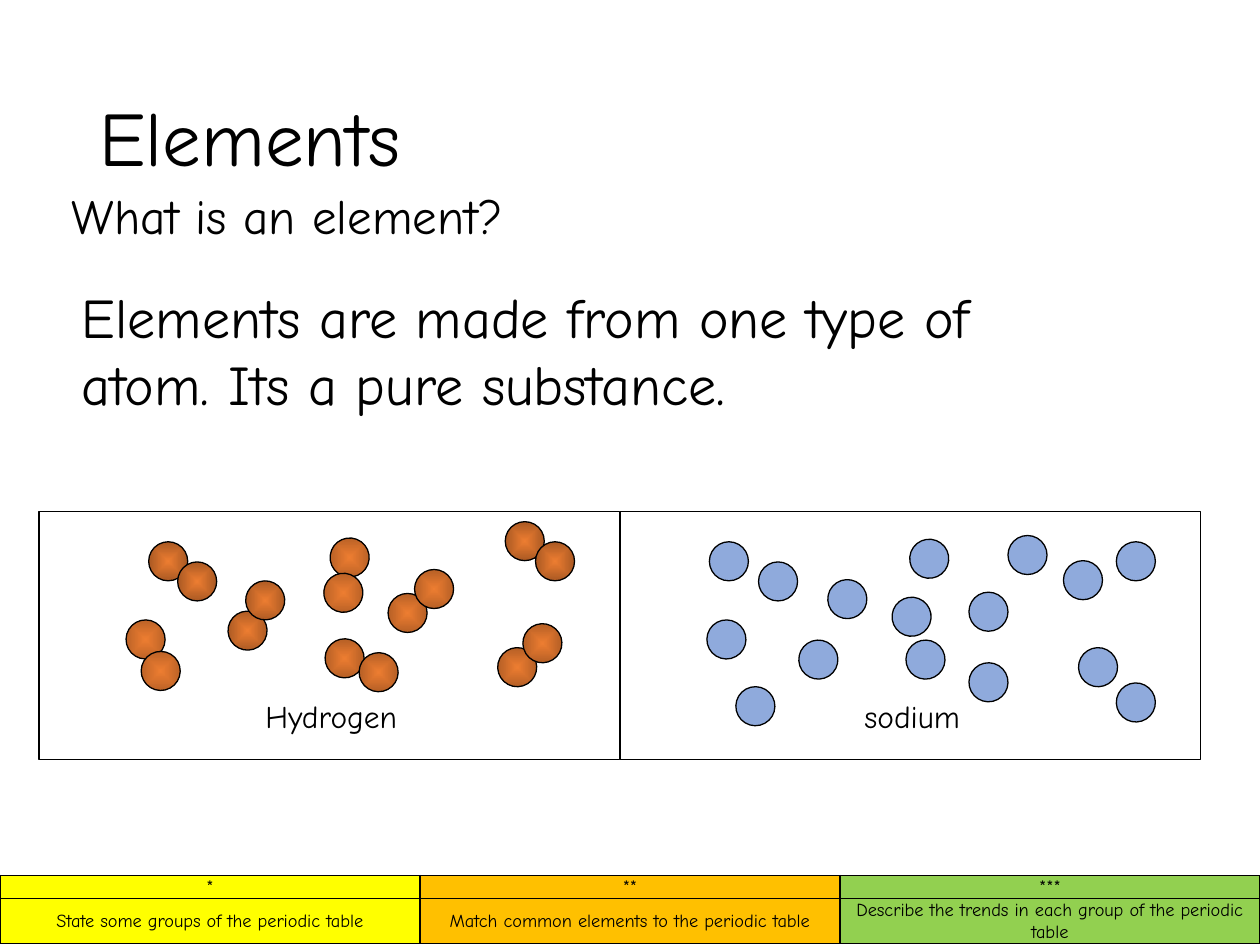
from lxml import etree
from pptx import Presentation
from pptx.dml.color import RGBColor
from pptx.enum import shapes, text
from pptx.oxml import parse_xml
from pptx.oxml.ns import nsdecls, qn
from pptx.util import Inches, Pt

FONT = "Comic Neue"
COLORS = {
    "black": "000000", "white": "FFFFFF", "sodium": "8FAADC",
    "hydrogen": "ED7D31", "hydrogen_edge": "AA5923",
    "yellow": "FFFF00", "amber": "FFC000", "green": "92D050",
}
GOALS = [
    ("*", "State some groups of the periodic table", "yellow"),
    ("**", "Match common elements to the periodic table", "amber"),
    ("***", "Describe the trends in each group of the periodic table", "green"),
]
ATOM_SIZE = 0.31
PANEL_TOP, PANEL_WIDTH, PANEL_HEIGHT = 4.06, 4.61, 1.97

# Pairs of atoms: rotation, then left and top of each
HYDROGEN = [
    (0, (1.18, 4.3), (1.41, 4.46)),
    (31.3, (1, 4.92), (1.12, 5.17)),
    (266.6, (1.81, 4.85), (1.95, 4.61)),
    (346.9, (2.58, 5.07), (2.85, 5.18)),
    (285.3, (3.08, 4.71), (3.29, 4.52)),
    (66.1, (2.62, 4.27), (2.57, 4.55)),
    (0, (4.01, 4.14), (4.25, 4.3)),
    (282.6, (3.95, 5.14), (4.15, 4.95)),
]
SODIUM = [
    (0, (5.63, 4.3), (6.02, 4.46)),
    (31.3, (5.61, 4.92), (5.84, 5.45)),
    (266.6, (6.34, 5.08), (6.57, 4.6)),
    (346.9, (7.19, 5.08), (7.69, 5.26)),
    (285.3, (7.69, 4.7), (8, 4.25)),
    (66.1, (7.22, 4.28), (7.08, 4.74)),
    (0, (8.44, 4.45), (8.86, 4.3)),
    (282.6, (8.56, 5.14), (8.86, 5.42)),
]


def rgb(name):
    return RGBColor.from_string(COLORS[name])


def write(tf, words, size, align=text.PP_ALIGN.LEFT, spacing=None, before=0):
    p = tf.paragraphs[0]
    p.alignment = align
    p.space_before = Pt(before)
    if spacing:
        p.line_spacing = spacing
    r = p.add_run()
    r.text = words
    r.font.size = Pt(size)
    r.font.name = FONT
    r.font.color.rgb = rgb("black")


def add_text(parent, box, words, size, **fmt):
    tf = parent.add_textbox(*map(Inches, box)).text_frame
    tf.word_wrap = True
    write(tf, words, size, **fmt)


def add_title(slide, words):
    s = slide.shapes.title
    s.left, s.top, s.width, s.height = map(Inches, (0.69, 0.4, 8.62, 1.45))
    s.text_frame.vertical_anchor = text.MSO_ANCHOR.MIDDLE
    write(s.text_frame, words, 44, spacing=0.9)


def add_outlined(parent, kind, box, color):
    sp = parent.add_shape(kind, *map(Inches, box))
    sp.shadow.inherit = False
    sp.fill.solid()
    sp.fill.fore_color.rgb = rgb(color)
    sp.line.color.rgb = rgb("black")
    sp.line.width = Pt(0.75)
    return sp


def shade_from_centre(sp, inner, outer):
    sp.fill.gradient()
    for stop, color in zip(sp.fill.gradient_stops, (inner, outer)):
        stop.color.rgb = rgb(color)
    grad = sp._element.spPr.find(qn("a:gradFill"))
    path = parse_xml(f'<a:path {nsdecls("a")} path="shape"/>')
    etree.SubElement(path, qn("a:fillToRect"), l="50000", t="50000", r="50000", b="50000")
    grad.replace(grad.find(qn("a:lin")), path)


def add_panel(slide, left, label, pairs, color, edge=None):
    """Draw a framed, labelled group of atoms, shaded when edge is given."""
    group = slide.shapes.add_group_shape().shapes
    add_outlined(group, shapes.MSO_SHAPE.RECTANGLE,
                 (left, PANEL_TOP, PANEL_WIDTH, PANEL_HEIGHT), color="white")
    add_text(group, (left + 0.47, 5.48, 3.7, 0.4), label, 18,
             align=text.PP_ALIGN.CENTER, before=9)
    for rotation, *places in pairs:
        for x, y in places:
            atom = add_outlined(group, shapes.MSO_SHAPE.OVAL,
                                (x, y, ATOM_SIZE, ATOM_SIZE), color)
            atom.rotation = rotation
            if edge:
                shade_from_centre(atom, color, edge)


def add_borders(cell):
    tc_pr = cell._tc.get_or_add_tcPr()
    for i, side in enumerate(("lnL", "lnR", "lnT", "lnB")):
        tc_pr.insert(i, parse_xml(
            f'<a:{side} {nsdecls("a")} w="12700"><a:solidFill>'
            f'<a:srgbClr val="{COLORS["black"]}"/></a:solidFill></a:{side}>'))


def add_goals(slide):
    table = slide.shapes.add_table(
        2, len(GOALS), *map(Inches, (0, 6.95, 10, 0.54))).table
    for row, height in zip(table.rows, (0.18, 0.36)):
        row.height = Inches(height)
    for col, (stars, goal, color) in enumerate(GOALS):
        table.columns[col].width = Inches(10 / len(GOALS))
        for row, words in enumerate((stars, goal)):
            cell = table.cell(row, col)
            cell.margin_left = cell.margin_right = Inches(0.07)
            cell.margin_top = cell.margin_bottom = 0
            cell.vertical_anchor = text.MSO_ANCHOR.MIDDLE
            cell.fill.solid()
            cell.fill.fore_color.rgb = rgb(color)
            add_borders(cell)
            write(cell.text_frame, words, 10.5,
                  align=text.PP_ALIGN.CENTER, spacing=1.07)


def main():
    prs = Presentation()
    prs.slide_width, prs.slide_height = Inches(10), Inches(7.5)
    slide = prs.slides.add_slide(prs.slide_layouts[5])
    add_goals(slide)
    add_title(slide, "Elements")
    add_text(slide.shapes, (0.47, 1.48, 9, 0.83), "What is an element?", 28,
             spacing=0.9, before=10)
    add_text(slide.shapes, (0.55, 2.19, 8.36, 1.18),
             "Elements are made from one type of atom. Its a pure substance.", 32)
    add_panel(slide, 4.92, "sodium", SODIUM, "sodium")
    add_panel(slide, 0.31, "Hydrogen", HYDROGEN, "hydrogen", edge="hydrogen_edge")
    prs.save("out.pptx")


if __name__ == "__main__":
    main()
